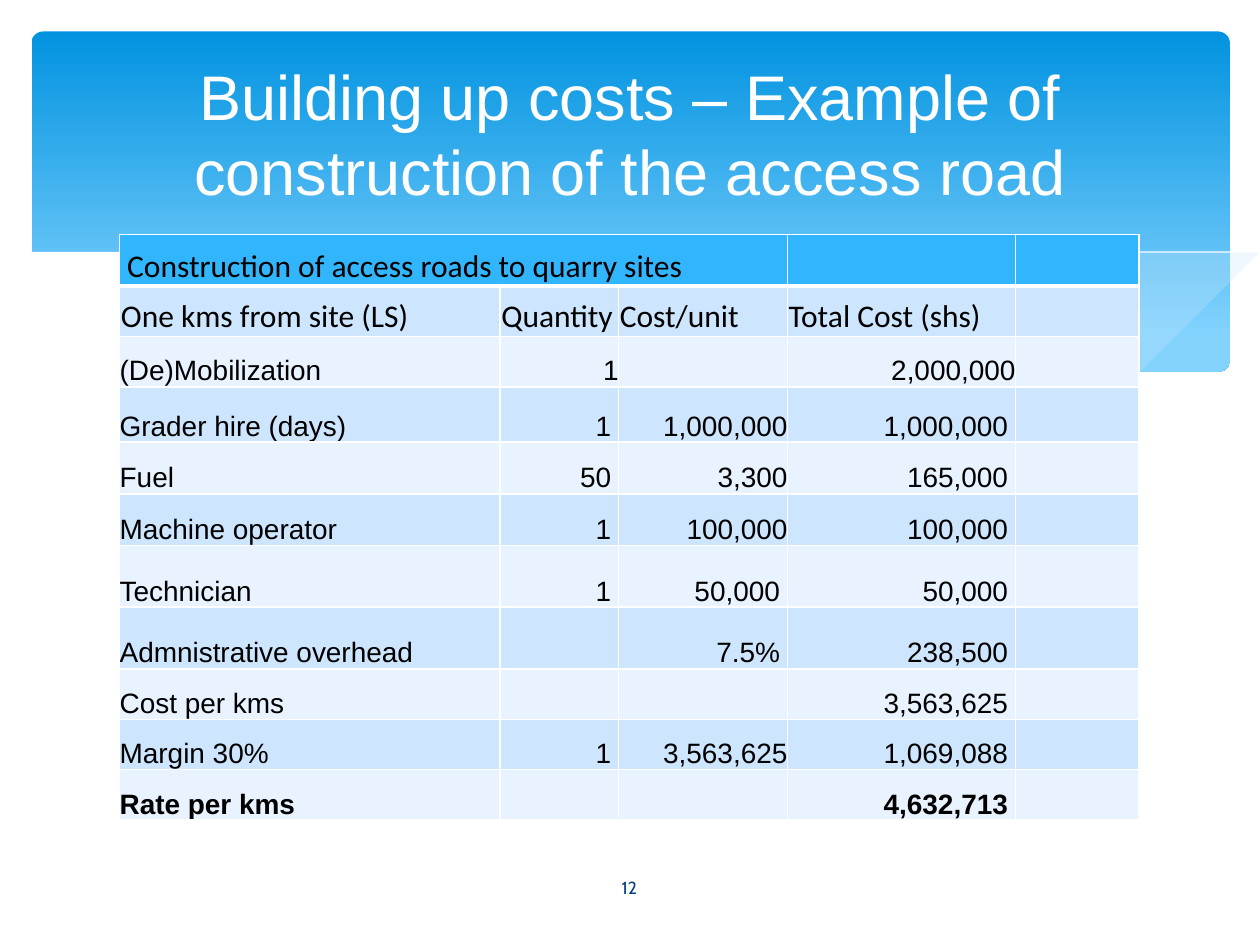
import pptx
import pptx.util
import pptx.dml.color
import pptx.enum.shapes
import pptx.enum.text
import pptx.oxml
from pptx.oxml import ns

HEX = {
    "white": "FFFFFF", "black": "000000", "navy": "073E87", "deep": "0293E0",
    "sky": "83D3FE", "mist": "C6E7FC", "head": "31B6FD",
    "odd": "CEE5FE", "even": "E8F3FF",
}
ALIGN = pptx.enum.text.PP_ALIGN
ANCHOR = pptx.enum.text.MSO_ANCHOR

# Wave outlines, in inches from the corner of the backdrop
BACK = [(9.75, 2), (9.48, 2.04), (9.06, 2.13), (8.61, 2.23), (8.05, 2.37), (7.53, 2.48),
        (7.06, 2.57), (6.61, 2.65), (7.05, 2.71), (7.45, 2.75), (7.81, 2.77), (8.14, 2.78),
        (8.54, 2.76), (8.89, 2.72), (9.21, 2.65), (9.49, 2.57), (9.76, 2.47), (9.76, 2)]
MID = [(8.93, 2.73), (8.37, 2.65), (7.75, 2.54), (7.06, 2.4), (6.29, 2.22), (5.84, 2.11),
       (5.41, 2.03), (5.02, 1.96), (4.65, 1.91), (4.2, 1.87), (3.8, 1.85), (3.44, 1.86),
       (3.13, 1.88), (2.86, 1.91), (3.23, 1.96), (3.62, 2.03), (4.04, 2.11), (4.49, 2.22),
       (4.91, 2.32), (5.3, 2.4), (5.84, 2.52), (6.34, 2.61), (6.8, 2.68), (7.22, 2.74),
       (7.61, 2.77), (7.96, 2.78), (8.38, 2.78), (8.67, 2.76)]
LONG = [(3.09, 1.95), (3.28, 1.92), (3.53, 1.89), (3.87, 1.87), (4.33, 1.87), (4.89, 1.9),
        (5.33, 1.94), (5.82, 2), (6.36, 2.08), (6.95, 2.19), (7.6, 2.33), (8.31, 2.51),
        (9.07, 2.72)]
SHORT = [(6.13, 2.57), (6.53, 2.46), (6.95, 2.35), (7.48, 2.23), (8.06, 2.1), (8.66, 1.99),
         (9.1, 1.92), (9.51, 1.87), (9.75, 1.85)]
FRONT = [(9.77, 2.46), (9.5, 2.56), (9.2, 2.65), (8.87, 2.71), (8.5, 2.75), (8.09, 2.77),
         (7.61, 2.75), (7.08, 2.7), (6.48, 2.62), (5.79, 2.5), (5.29, 2.39), (4.75, 2.27),
         (4.18, 2.13), (3.65, 2.02), (3.16, 1.94), (2.71, 1.88), (2.3, 1.85), (1.93, 1.84),
         (1.61, 1.84), (1.32, 1.86), (1.06, 1.89), (0.85, 1.93), (0.67, 1.97), (0.52, 2.01),
         (0.4, 2.05), (0.29, 2.1), (0.23, 2.13), (0.23, 3.29), (9.77, 3.29)]

ROWS = [
    ("Construction of access roads to quarry sites", "", "", ""),
    ("One kms from site (LS)", "Quantity", "Cost/unit", "Total Cost (shs)"),
    ("(De)Mobilization", "1", "", "2,000,000"),
    ("Grader hire (days)", "1", "1,000,000", "1,000,000"),
    ("Fuel", "50", "3,300", "165,000"),
    ("Machine operator", "1", "100,000", "100,000"),
    ("Technician", "1", "50,000", "50,000"),
    ("Admnistrative overhead", "", "7.5%", "238,500"),
    ("Cost per kms", "", "", "3,563,625"),
    ("Margin 30%", "1", "3,563,625", "1,069,088"),
    ("Rate per kms", "", "", "4,632,713"),
]
WIDE = [3.02, 0.94, 1.34, 1.81, 0.98]
HIGH = [0.41, 0.4, 0.4, 0.44, 0.41, 0.41, 0.49, 0.49, 0.4, 0.4, 0.4]
# Numbers that touch the right edge of their cell
FLUSH = {(2, 1), (2, 3), (3, 2), (4, 2), (5, 2), (9, 2)}


def inch(num):
    return pptx.util.Cm(num * 2.54)


def tint(name):
    return pptx.dml.color.RGBColor.from_string(HEX[name])


def style(para, face, size, name, align=ALIGN.LEFT, bold=False):
    para.alignment = align
    for run in para.runs:
        font = run.font
        font.name, font.size, font.bold = face, pptx.util.Pt(size), bold
        font.color.rgb = tint(name)


def wave(slide, box, pts, fill=None, alpha=None):
    """A filled shape, or an open white hairline when no fill is given."""
    left, top = box[:2]
    pts = [(left + x, top + y) for x, y in pts]
    form = slide.shapes.build_freeform(*pts[0], scale=inch(1))
    form.add_line_segments(pts[1:], close=fill is not None)
    shape = form.convert_to_shape()
    shape.shadow.inherit = False
    if fill is None:
        shape.fill.background()
        shape.line.color.rgb = tint("white")
        shape.line.width = 0
        return
    shape.line.fill.background()
    shape.fill.solid()
    shape.fill.fore_color.rgb = tint(fill)
    if alpha:
        clr = next(shape.element.spPr.iter(ns.qn("a:srgbClr")))
        clr.append(pptx.oxml.parse_xml(
            f'<a:alpha {ns.nsdecls("a")} val="{alpha * 1000}"/>'))


def backdrop(slide, box):
    left, top, wide, _ = box
    band = slide.shapes.add_shape(
        pptx.enum.shapes.MSO_SHAPE.ROUNDED_RECTANGLE,
        *map(inch, (left + 0.25, top + 0.25, wide - 0.49, 2.7)))
    band.adjustments[0] = 0.034
    band.shadow.inherit = False
    band.line.fill.background()
    band.fill.gradient()
    band.fill.gradient_angle = 270
    for stop, name, pos in zip(band.fill.gradient_stops, ("deep", "sky"), (0, 0.9)):
        stop.color.rgb = tint(name)
        stop.position = pos
    wave(slide, box, BACK, "mist", 29)
    wave(slide, box, MID, "mist", 40)
    wave(slide, box, LONG)
    wave(slide, box, SHORT)
    wave(slide, box, FRONT, "white")


def border(cell, base):
    props = cell._tc.get_or_add_tcPr()
    for pos, side in enumerate("LRTB"):
        width = pptx.util.Pt(base if side == "B" else 1)
        props.insert(pos, pptx.oxml.parse_xml(
            f'<a:ln{side} {ns.nsdecls("a")} w="{width}"><a:solidFill>'
            f'<a:srgbClr val="{HEX["white"]}"/></a:solidFill></a:ln{side}>'))


def costs(slide, box):
    frame = slide.shapes.add_table(len(ROWS), len(WIDE), *map(inch, box))
    table = frame.table
    table.first_row = table.horz_banding = False
    for col, wide in zip(table.columns, WIDE):
        col.width = inch(wide)
    for row, high in zip(table.rows, HIGH):
        row.height = inch(high)
    for i, texts in enumerate(ROWS):
        name = "head" if i == 0 else ("even", "odd")[i % 2]
        pad = 0.01 if i < 2 else 0
        for j in range(len(WIDE)):
            cell = table.cell(i, j)
            cell.fill.solid()
            cell.fill.fore_color.rgb = tint(name)
            border(cell, 3 if i == 0 else 1)
            cell.vertical_anchor = ANCHOR.BOTTOM
            cell.margin_left = cell.margin_right = cell.margin_top = inch(pad)
            cell.margin_bottom = 0
            if j == len(texts) or not texts[j]:
                continue
            para = cell.text_frame.paragraphs[0]
            para.text = texts[j]
            if i < 2:
                style(para, "Calibri", 18, "black")
            else:
                style(para, "Arial", 16, "black", ALIGN.RIGHT if j else ALIGN.LEFT,
                      bold=i == len(ROWS) - 1)
                if j and (i, j) not in FLUSH:
                    cell.margin_right = inch(0.06)
    table.cell(0, 0).margin_left = inch(0.06)
    table.cell(0, 0).merge(table.cell(0, 2))


def number(slide, box):
    frame = slide.shapes.add_textbox(*map(inch, box)).text_frame
    frame.word_wrap = True
    frame.vertical_anchor = ANCHOR.MIDDLE
    frame.text = "12"
    style(frame.paragraphs[0], "Cabin", 10, "navy", ALIGN.CENTER)


def heading(slide, box):
    title = slide.shapes.title
    title.left, title.top, title.width, title.height = map(inch, box)
    frame = title.text_frame
    frame.text = "Building up costs – Example of construction of the access road"
    frame.vertical_anchor = ANCHOR.MIDDLE
    style(frame.paragraphs[0], "Arial", 36, "white", ALIGN.CENTER)
    # Bring the title in front of the backdrop
    slide.shapes.element.append(title.element)


def main():
    deck = pptx.Presentation()
    deck.slide_width, deck.slide_height = inch(10), inch(7.5)
    slide = deck.slides.add_slide(deck.slide_layouts[5])
    backdrop(slide, (0, 0, 10, 7.5))
    costs(slide, (0.95, 1.86, sum(WIDE), sum(HIGH)))
    number(slide, (4.36, 6.84, 1.27, 0.4))
    heading(slide, (0.5, 0.37, 9, 1.37))
    deck.save("out.pptx")


if __name__ == "__main__":
    main()
